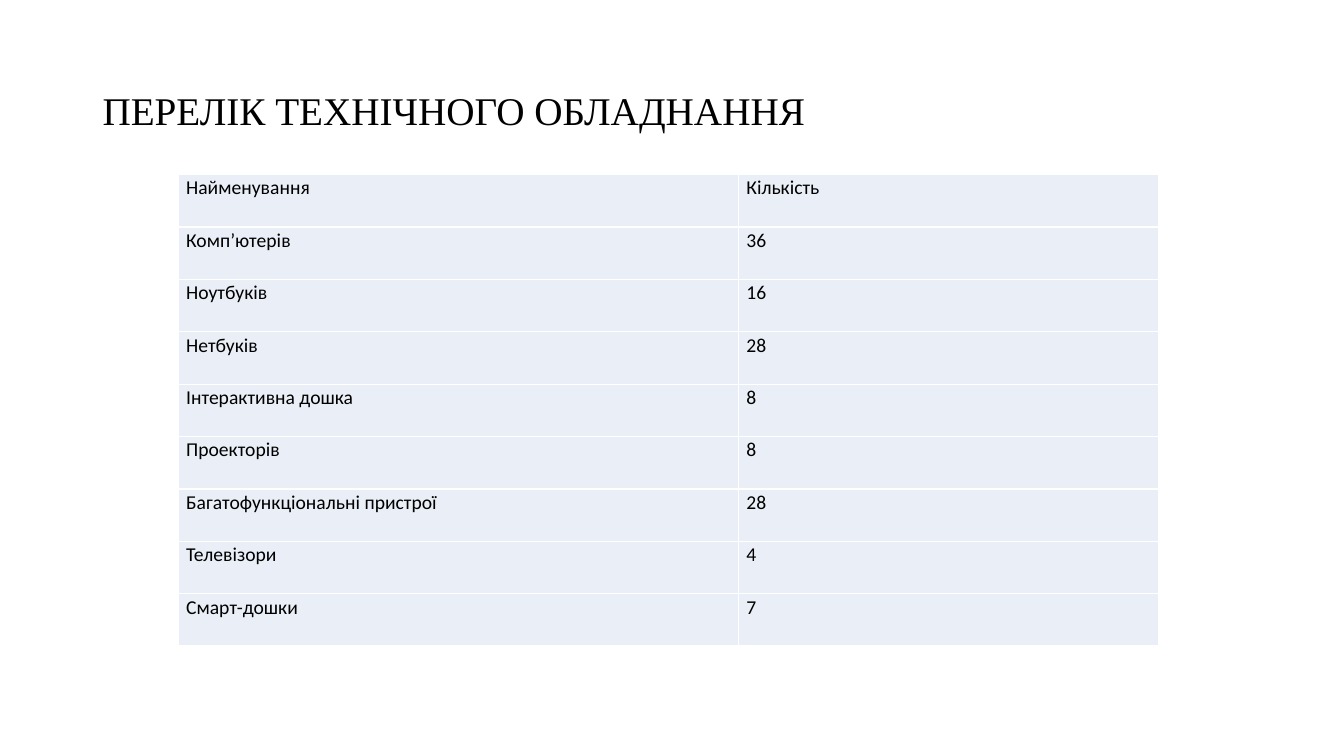
from lxml import etree
from pptx import Presentation
from pptx import util as u
from pptx.dml import color
from pptx.enum import text
from pptx.oxml import ns

COLOURS = {"text": "000000", "cell": "EAEFF7", "border": "FFFFFF"}
EQUIPMENT = [
    ("Найменування", "Кількість"),
    ("Комп’ютерів", "36"),
    ("Ноутбуків", "16"),
    ("Нетбуків", "28"),
    ("Інтерактивна дошка", "8"),
    ("Проекторів", "8"),
    ("Багатофункціональні пристрої", "28"),
    ("Телевізори", "4"),
    ("Смарт-дошки", "7"),
]


class EquipmentSlide:
    """Holds the slide and its style, and adds the title and the table."""

    def __init__(self, presentation):
        self.slide = presentation.slides.add_slide(presentation.slide_layouts[5])
        self.title_font = "Times New Roman"
        self.table_font = "Calibri"

    def format_paragraph(self, paragraph, font_name, size, line_spacing):
        paragraph.alignment = text.PP_ALIGN.LEFT
        paragraph.line_spacing = line_spacing
        for run in paragraph.runs:
            run.font.name = font_name
            run.font.size = u.Pt(size)
            run.font.bold = False
            run.font.color.rgb = color.RGBColor.from_string(COLOURS["text"])

    def add_title(self, wording, left, top, width, height):
        title = self.slide.shapes.title
        title.left, title.top = u.Cm(left), u.Cm(top)
        title.width, title.height = u.Cm(width), u.Cm(height)
        frame = title.text_frame
        frame.text = wording
        frame.auto_size = text.MSO_AUTO_SIZE.NONE
        frame.vertical_anchor = text.MSO_ANCHOR.MIDDLE
        self.format_paragraph(frame.paragraphs[0], self.title_font, 28, 0.9)

    def add_borders(self, cell):
        properties = cell._tc.get_or_add_tcPr()
        for side in ("lnL", "lnR", "lnT", "lnB"):
            line = etree.SubElement(properties, ns.qn(f"a:{side}"), w=str(u.Pt(1)))
            fill = etree.SubElement(line, ns.qn("a:solidFill"))
            etree.SubElement(fill, ns.qn("a:srgbClr"), val=COLOURS["border"])

    def format_cell(self, cell, wording):
        cell.text_frame.text = wording
        cell.margin_left = cell.margin_right = u.Cm(0.19)
        cell.margin_top = cell.margin_bottom = 0
        self.add_borders(cell)
        cell.fill.solid()
        cell.fill.fore_color.rgb = color.RGBColor.from_string(COLOURS["cell"])
        paragraph = cell.text_frame.paragraphs[0]
        paragraph.space_after = u.Pt(8)
        self.format_paragraph(paragraph, self.table_font, 14, 1.07)

    def add_table(self, rows, left, top, column_widths, row_height):
        table = self.slide.shapes.add_table(
            len(rows), len(column_widths), u.Cm(left), u.Cm(top),
            u.Cm(sum(column_widths)), u.Cm(row_height * len(rows))).table
        for column, width in zip(table.columns, column_widths):
            column.width = u.Cm(width)
        for row, wordings in zip(table.rows, rows):
            row.height = u.Cm(row_height)
            for cell, wording in zip(row.cells, wordings):
                self.format_cell(cell, wording)


def main():
    presentation = Presentation()
    presentation.slide_width = u.Cm(33.87)
    presentation.slide_height = u.Cm(19.05)
    slide = EquipmentSlide(presentation)
    slide.add_title("ПЕРЕЛІК ТЕХНІЧНОГО ОБЛАДНАННЯ", 2.33, 1.01, 29.21, 3.68)
    slide.add_table(EQUIPMENT, 4.5, 4.4, (14.12, 10.59), 1.32)
    presentation.save("out.pptx")


if __name__ == "__main__":
    main()
